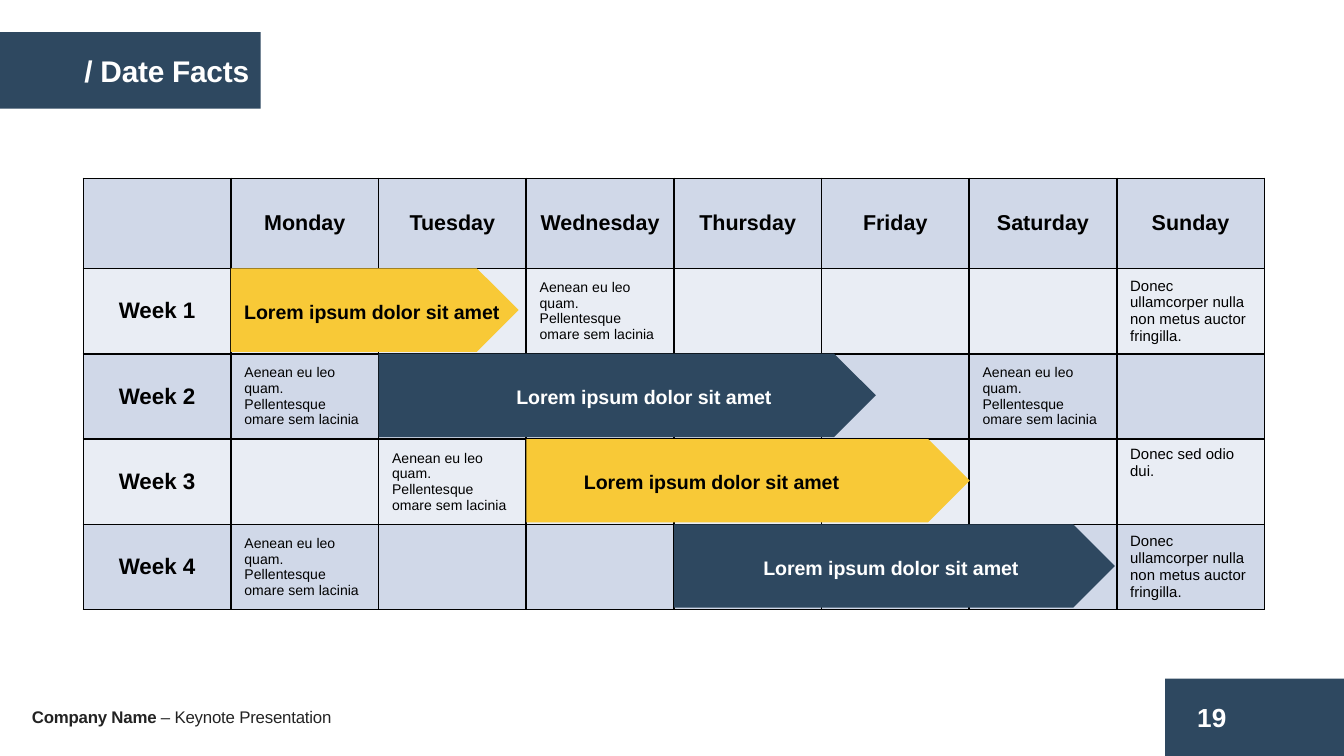
"""Builds a weekly schedule slide with a table and arrow bars."""
from lxml import etree
from pptx import Presentation
from pptx.dml.color import RGBColor
from pptx.enum import shapes, text
from pptx.oxml import ns
from pptx.util import Pt

NAVY = RGBColor(0x2E, 0x48, 0x60)
GOLD = RGBColor(0xF8, 0xC9, 0x37)
BLUE = RGBColor(0xD0, 0xD8, 0xE8)
PALE = RGBColor(0xE9, 0xED, 0xF4)
INK = RGBColor(0x23, 0x23, 0x23)
BLACK = RGBColor(0, 0, 0)
WHITE = RGBColor(255, 255, 255)

LEFT, MID = text.PP_ALIGN.LEFT, text.PP_ALIGN.CENTER
COL, HEAD, ROW = 79.11, 48.2, 45.7
DAYS = ["Monday", "Tuesday", "Wednesday", "Thursday", "Friday", "Saturday", "Sunday"]
NOTE = "Aenean eu leo quam. Pellentesque omare sem lacinia"
DONEC = "Donec ullamcorper nulla non metus auctor fringilla."
NOTES = {(1, 3): NOTE, (2, 1): NOTE, (2, 6): NOTE, (3, 2): NOTE, (4, 1): NOTE}
ENDS = {(1, 7): DONEC, (3, 7): "Donec sed odio dui.", (4, 7): DONEC}
LABEL = "Lorem ipsum dolor sit amet"
BARS = [
    (1, 154.1, GOLD, BLACK, 0, 164.9, LEFT),
    (2, 266.4, NAVY, WHITE, 0, 284.4, MID),
    (3, 237.6, GOLD, BLACK, 0, 198.7, MID),
    (4, 236.2, NAVY, WHITE, -25.9, 284.4, MID),
]


def style(para, size, color, bold=False, align=LEFT):
    """Set the font and alignment of a paragraph."""
    para.alignment = align
    font = para.font
    font.name, font.size, font.bold = "Arial", Pt(size), bold
    font.color.rgb = color


def tighten(para):
    """Bring the letters of every run slightly closer."""
    for run in para.runs:
        run._r.get_or_add_rPr().set("spc", "-10")


def block(slide, kind, box, color):
    """Add a flat filled shape."""
    shape = slide.shapes.add_shape(kind, *map(Pt, box))
    shape.shadow.inherit = False
    shape.fill.solid()
    shape.fill.fore_color.rgb = color
    shape.line.fill.background()


def label(slide, box, words, *look):
    """Add a wrapped text box and return its paragraph."""
    frame = slide.shapes.add_textbox(*map(Pt, box)).text_frame
    frame.word_wrap = True
    para = frame.paragraphs[0]
    para.text = words
    style(para, *look)
    return para


def title(slide, box):
    """Place the title placeholder over its banner."""
    x, y, w, h = box
    block(slide, shapes.MSO_SHAPE.RECTANGLE, box, NAVY)
    head = slide.shapes.title
    slide.shapes._spTree.append(head._element)
    head.left, head.top = Pt(x + 38), Pt(y + 7.2)
    head.width, head.height = Pt(168.5), Pt(26.7)
    head.text = "/ Date Facts"
    head.text_frame.vertical_anchor = text.MSO_ANCHOR.TOP
    para = head.text_frame.paragraphs[0]
    style(para, 16, WHITE, True)
    tighten(para)


def footer(slide, box):
    """Place the company line and the page number."""
    x, y, w, h = box
    para = label(slide, (x + 10, y + 11.5, 232.6, 18), "", 9, INK)
    name = para.add_run()
    name.text, name.font.bold = "Company Name ", True
    para.add_run().text = "– Keynote Presentation"
    tighten(para)
    block(slide, shapes.MSO_SHAPE.RECTANGLE, (x + w - 95.8, y, 95.8, h), NAVY)
    label(slide, (x + w - 85.7, y + 8.6, 36, 24.5), "19", 14, WHITE, True)


def edge(cell):
    """Draw thin black lines around a cell."""
    props = cell._tc.get_or_add_tcPr()
    for i, side in enumerate(("a:lnL", "a:lnR", "a:lnT", "a:lnB")):
        line = etree.Element(ns.qn(side), w=str(Pt(1)))
        fill = etree.SubElement(line, ns.qn("a:solidFill"))
        etree.SubElement(fill, ns.qn("a:srgbClr"), val=str(BLACK))
        props.insert(i, line)


def entry(row, col):
    """Return the words, size, weight and alignment of a cell."""
    if row == 0:
        return ([""] + DAYS)[col], 11.5, True, MID
    if col == 0:
        return f"Week {row}", 12, True, MID
    if (row, col) in NOTES:
        return NOTES[row, col], 7.5, False, LEFT
    return ENDS.get((row, col), ""), 8, False, LEFT


def grid(slide, box):
    """Place the schedule table."""
    table = slide.shapes.add_table(5, 8, *map(Pt, box)).table
    for col in table.columns:
        col.width = Pt(COL)
    for r, line in enumerate(table.rows):
        line.height = Pt(ROW if r else HEAD)
        for c, cell in enumerate(line.cells):
            words, size, bold, align = entry(r, c)
            cell.text = words
            style(cell.text_frame.paragraphs[0], size, BLACK, bold, align)
            top = (r, c) == (3, 7)
            cell.vertical_anchor = text.MSO_ANCHOR.TOP if top else text.MSO_ANCHOR.MIDDLE
            cell.fill.solid()
            cell.fill.fore_color.rgb = PALE if r % 2 else BLUE
            edge(cell)


def bars(slide, box):
    """Place one labelled arrow bar in each week of the table."""
    for i, (col, wide, fill, ink, shift, span, align) in enumerate(BARS):
        x, y = box[0] + col * COL, box[1] + HEAD + i * ROW
        block(slide, shapes.MSO_SHAPE.PENTAGON, (x, y, wide, 44.64), fill)
        label(slide, (x + shift, y + 13.2, span, 20.9), LABEL, 10.5, ink, True, align)


def main():
    """Build and save the slide."""
    deck = Presentation()
    deck.slide_width, deck.slide_height = Pt(720), Pt(405)
    slide = deck.slides.add_slide(deck.slide_layouts[5])
    footer(slide, (0, 363.6, 720, 42.2))
    title(slide, (0, 17.3, 139.7, 41))
    area = (44.64, 95.6, 8 * COL, HEAD + 4 * ROW)
    grid(slide, area)
    bars(slide, area)
    deck.save("out.pptx")


if __name__ == "__main__":
    main()
